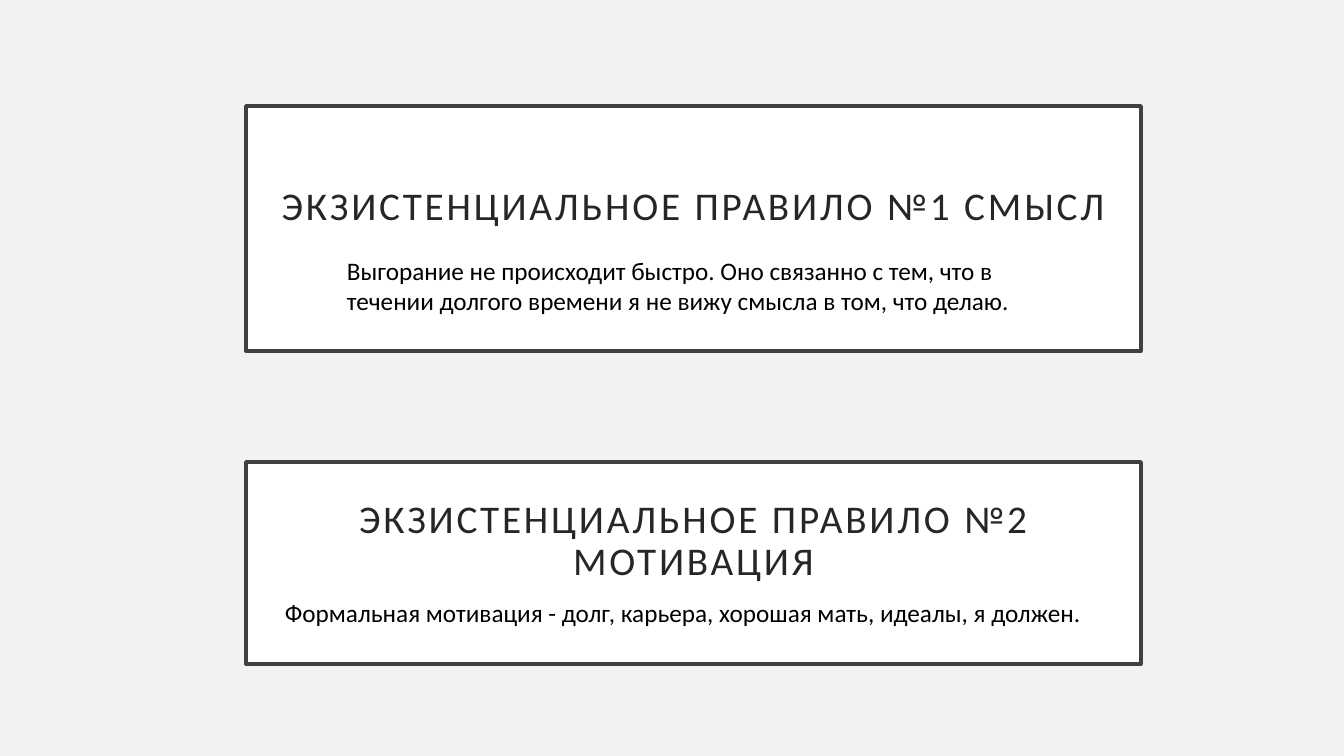
from dataclasses import dataclass

from pptx import Presentation
from pptx.dml.color import RGBColor
from pptx.enum.shapes import MSO_SHAPE as Shape
from pptx.enum.text import MSO_ANCHOR as Anchor, PP_ALIGN as Align
from pptx.slide import Slide
from pptx.text.text import TextFrame
from pptx.util import Emu, Pt

WIDE, HIGH = 1344, 756
SCALE = 12192000 / WIDE

BACK = RGBColor(0xF2, 0xF2, 0xF2)
WHITE = RGBColor(0xFF, 0xFF, 0xFF)
BLACK = RGBColor(0x00, 0x00, 0x00)
FRAME = RGBColor(0x40, 0x40, 0x40)
INK = RGBColor(0x26, 0x26, 0x26)

FONT = "Calibri"
LEFT, WIDTH = 246, 895  # shared by both cards
PAD, FOOT = 20, 62  # card insets; the foot leaves room for the note


def px(size: int) -> Emu:
    return Emu(round(size * SCALE))


@dataclass
class Note:
    text: str
    left: int
    top: int
    width: int
    height: int


@dataclass
class Card:
    title: str
    top: int
    height: int
    note: Note


CARDS = [
    Card("ЭКЗИСТЕНЦИАЛЬНОЕ ПРАВИЛО №1 СМЫСЛ", 106, 245,
         Note("Выгорание не происходит быстро. Оно связанно с тем, что в "
              "течении долгого времени я не вижу смысла в том, что делаю.",
              337, 250, 713, 102)),
    Card("ЭКЗИСТЕНЦИАЛЬНОЕ ПРАВИЛО №2\nМОТИВАЦИЯ", 462, 202,
         Note("Формальная мотивация - долг, карьера, хорошая мать, идеалы, "
              "я должен.", 275, 592, 836, 72)),
]


def write(frame: TextFrame, text: str, size: int, color: RGBColor) -> None:
    frame.word_wrap = True
    frame.text = text
    for para in frame.paragraphs:
        for run in para.runs:
            run.font.name = FONT
            run.font.size = Pt(size)
            run.font.color.rgb = color


def draw_note(slide: Slide, note: Note) -> None:
    box = slide.shapes.add_textbox(px(note.left), px(note.top),
                                   px(note.width), px(note.height))
    write(box.text_frame, note.text, 18, BLACK)


def draw_card(slide: Slide, card: Card) -> None:
    # Framed panel
    box = slide.shapes.add_shape(Shape.RECTANGLE, px(LEFT), px(card.top),
                                 px(WIDTH), px(card.height))
    box.shadow.inherit = False
    box.fill.solid()
    box.fill.fore_color.rgb = WHITE
    box.line.color.rgb = FRAME
    box.line.width = Pt(2.5)

    # Spaced title
    frame = box.text_frame
    frame.margin_left = frame.margin_right = frame.margin_top = px(PAD)
    frame.margin_bottom = px(FOOT)
    frame.vertical_anchor = Anchor.MIDDLE
    write(frame, card.title, 28, INK)
    for para in frame.paragraphs:
        para.alignment = Align.CENTER
        para.line_spacing = 0.9
        for run in para.runs:
            run.font._element.set("spc", "200")

    draw_note(slide, card.note)


def main() -> None:
    deck = Presentation()
    deck.slide_width, deck.slide_height = px(WIDE), px(HIGH)
    slide = deck.slides.add_slide(deck.slide_layouts[6])
    slide.background.fill.solid()
    slide.background.fill.fore_color.rgb = BACK
    for card in CARDS:
        draw_card(slide, card)
    deck.save("out.pptx")


if __name__ == "__main__":
    main()
